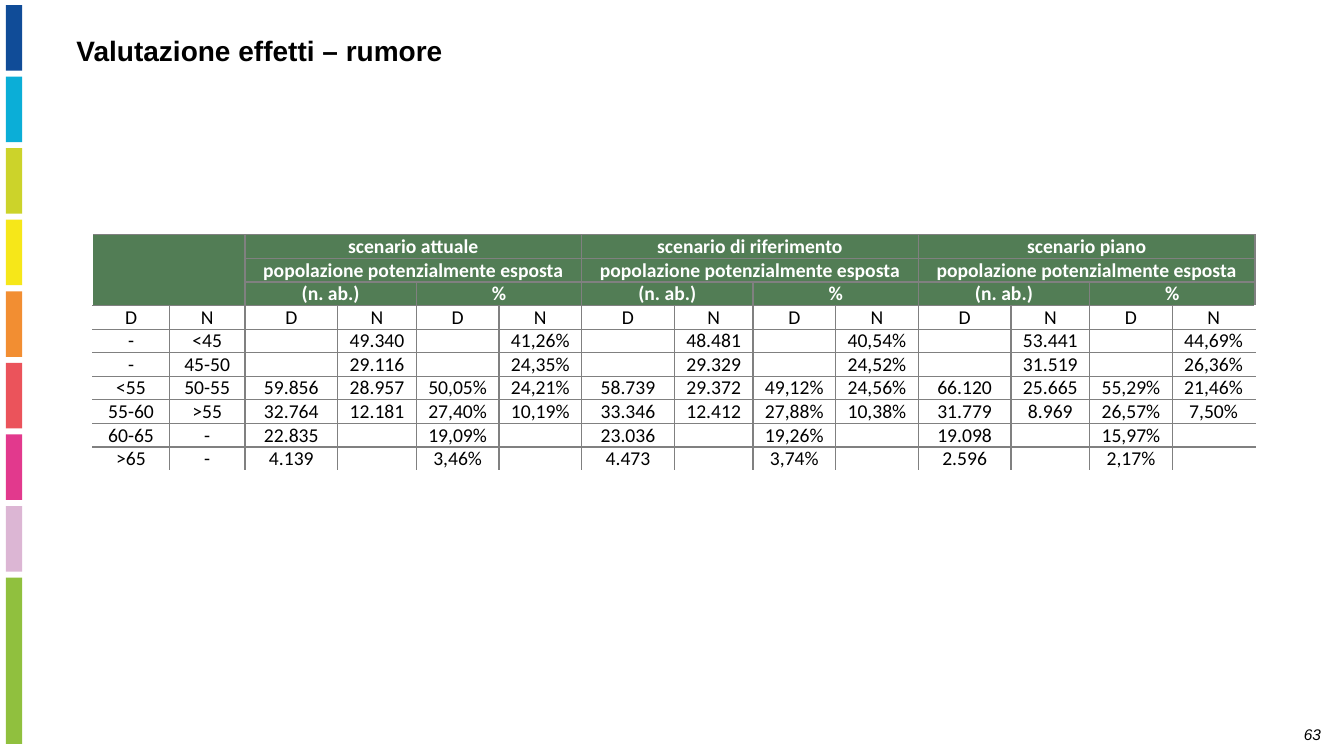
import pptx
import pptx.util
import pptx.dml.color
import pptx.enum.shapes
import pptx.enum.text
import lxml.etree
from dataclasses import dataclass
from pptx.util import Inches

ALIGN = pptx.enum.text.PP_ALIGN
ANCHOR = pptx.enum.text.MSO_ANCHOR


@dataclass(frozen=True)
class Theme:
    black: str = "000000"
    white: str = "FFFFFF"
    green: str = "527D55"
    grey: str = "808080"
    bars: tuple = ("104C98", "0BAED7", "CCD32A", "F6E719", "F28E32",
                   "EB535B", "E2398D", "DCB6D4", "90C03E")
    sans: str = "Arial"
    body: str = "Calibri"
    title: int = 20
    table: int = 14
    page: int = 11


THEME = Theme()

# Table content
SCENES = ("scenario attuale", "scenario di riferimento", "scenario piano")
GROUP = "popolazione potenzialmente esposta"
UNITS = ("(n. ab.)", "%")
BODY = [
    ["D", "N"] * 7,
    "-;<45;;49.340;;41,26%;;48.481;;40,54%;;53.441;;44,69%".split(";"),
    "-;45-50;;29.116;;24,35%;;29.329;;24,52%;;31.519;;26,36%".split(";"),
    ("<55;50-55;59.856;28.957;50,05%;24,21%;58.739;29.372;49,12%;24,56%;"
     "66.120;25.665;55,29%;21,46%").split(";"),
    ("55-60;>55;32.764;12.181;27,40%;10,19%;33.346;12.412;27,88%;10,38%;"
     "31.779;8.969;26,57%;7,50%").split(";"),
    "60-65;-;22.835;;19,09%;;23.036;;19,26%;;19.098;;15,97%;".split(";"),
    ">65;-;4.139;;3,46%;;4.473;;3,74%;;2.596;;2,17%;".split(";"),
]
HEAD = 3
ROWS = HEAD + len(BODY)
WIDTHS = [0.76, 0.75] + [0.92, 0.78, 0.82, 0.82] * 3
COLS = len(WIDTHS)


def rgb(code):
    return pptx.dml.color.RGBColor.from_string(code)


def apply(item, form):
    for name, value in form.items():
        setattr(item, name, value)


def write(para, text, color, form):
    run = para.add_run()
    run.text = text
    apply(run.font, form)
    run.font.color.rgb = rgb(color)


def add_bar(slide, top, high, color):
    bar = slide.shapes.add_shape(
        pptx.enum.shapes.MSO_SHAPE.RECTANGLE,
        Inches(0.06), Inches(top), Inches(0.16), Inches(high))
    bar.shadow.inherit = False
    bar.fill.solid()
    bar.fill.fore_color.rgb = rgb(color)
    bar.line.fill.background()


def add_label(slide, text, place, form, layout):
    box = slide.shapes.add_textbox(*map(Inches, place))
    box.text_frame.word_wrap = True
    para = box.text_frame.paragraphs[0]
    apply(para, layout)
    write(para, text, THEME.black, {"name": THEME.sans, **form})


def add_edge(cell, side):
    props = cell._tc.get_or_add_tcPr()
    tag = pptx.oxml.ns.qn
    line = lxml.etree.SubElement(props, tag("a:ln" + side), w="12700")
    fill = lxml.etree.SubElement(line, tag("a:solidFill"))
    lxml.etree.SubElement(fill, tag("a:srgbClr"), val=THEME.grey)


def style_cell(cell, row, col):
    # Outer left, right and bottom edges stay open
    shown = {"L": col > 0, "R": col < COLS - 1, "T": True, "B": row < ROWS - 1}
    for side, drawn in shown.items():
        if drawn:
            add_edge(cell, side)
    if row < HEAD:
        cell.fill.solid()
        cell.fill.fore_color.rgb = rgb(THEME.green)
    else:
        cell.fill.background()
    apply(cell, {"vertical_anchor": ANCHOR.MIDDLE,
                 "margin_left": Inches(0.07), "margin_right": Inches(0.07),
                 "margin_top": 0, "margin_bottom": 0})


def fill_cell(cell, text, head):
    para = cell.text_frame.paragraphs[0]
    para.alignment = ALIGN.CENTER
    if text:
        write(para, text, THEME.white if head else THEME.black,
              {"name": THEME.body, "size": pptx.util.Pt(THEME.table),
               "bold": head})
    else:
        # Keeps an empty cell as low as its row
        lxml.etree.SubElement(para._p, pptx.oxml.ns.qn("a:endParaRPr"),
                              sz=str(THEME.table * 100))


def head_rows():
    rows = [[""] * COLS for _ in range(HEAD)]
    for i, scene in enumerate(SCENES):
        left = 2 + 4 * i
        rows[0][left] = scene
        rows[1][left] = GROUP
        rows[2][left], rows[2][left + 2] = UNITS
    return rows


def add_grid(slide):
    frame = slide.shapes.add_table(ROWS, COLS, Inches(0.92), Inches(2.33),
                                   Inches(sum(WIDTHS)), Inches(2.3))
    table = frame.table
    apply(table, {"first_row": False, "horz_banding": False})
    for column, width in zip(table.columns, WIDTHS):
        column.width = Inches(width)
    for row, texts in enumerate(head_rows() + BODY):
        table.rows[row].height = Inches(0.23)
        for col, text in enumerate(texts):
            cell = table.cell(row, col)
            style_cell(cell, row, col)
            fill_cell(cell, text, row < HEAD)
    # Header spans
    table.cell(0, 0).merge(table.cell(HEAD - 1, 1))
    for row, span in enumerate((4, 4, 2)):
        for col in range(2, COLS, span):
            table.cell(row, col).merge(table.cell(row, col + span - 1))


def main():
    deck = pptx.Presentation()
    apply(deck, {"slide_width": Inches(13.33), "slide_height": Inches(7.5)})
    slide = deck.slides.add_slide(deck.slide_layouts[6])

    # Colour strip, with a longer last bar
    last = len(THEME.bars) - 1
    for i, color in enumerate(THEME.bars):
        add_bar(slide, 0.05 + 0.71 * i, 1.65 if i == last else 0.65, color)

    # Page number and title
    add_label(slide, "63", (12.02, 7.14, 1.18, 0.29),
              {"size": pptx.util.Pt(THEME.page), "italic": True},
              {"alignment": ALIGN.RIGHT})
    add_label(slide, "Valutazione effetti – rumore", (0.66, 0.35, 10.43, 0.6),
              {"size": pptx.util.Pt(THEME.title), "bold": True},
              {"line_spacing": 0.8})

    # Exposure table
    add_grid(slide)
    deck.save("out.pptx")


if __name__ == "__main__":
    main()
